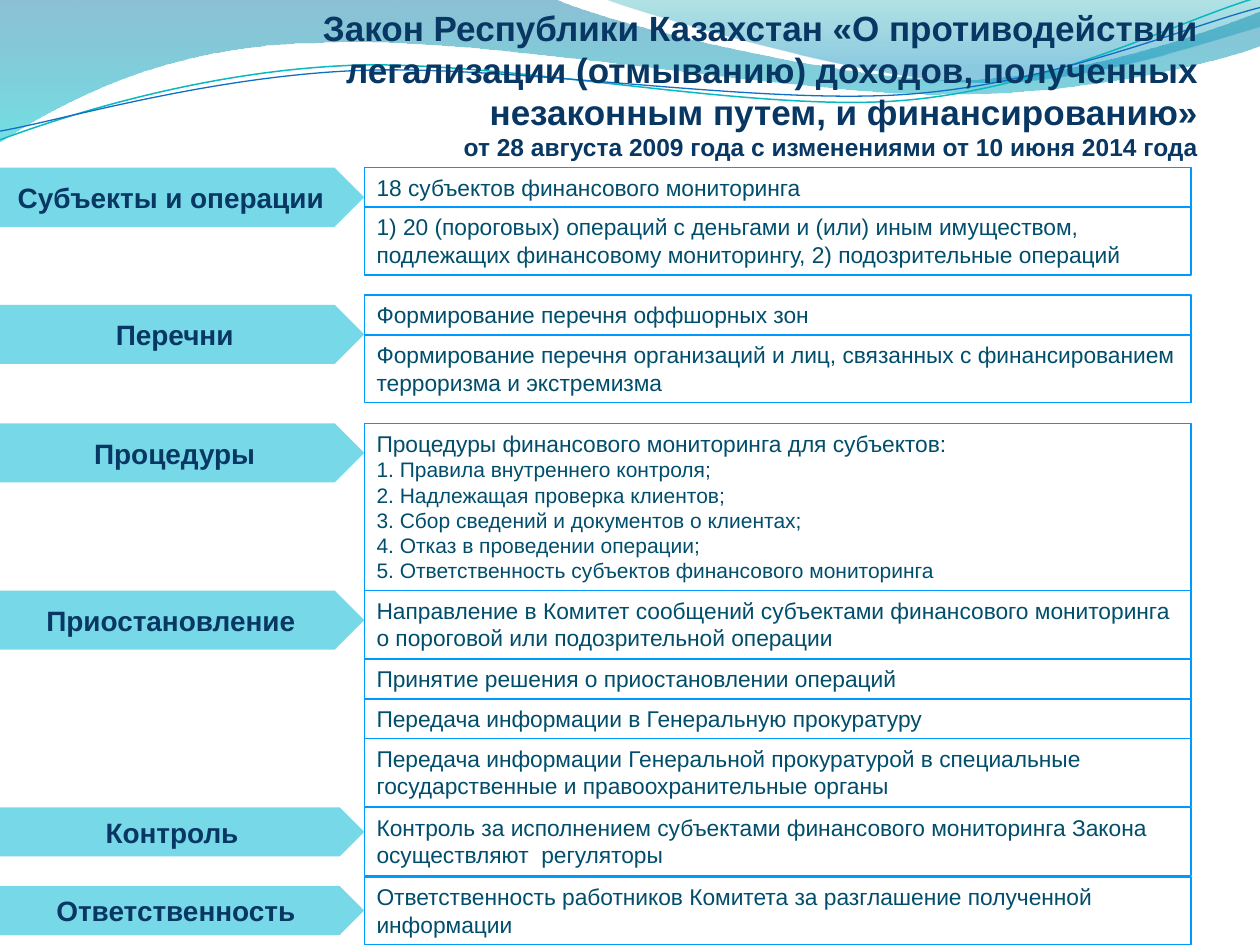
"""Build a slide on the Kazakhstan law against money laundering."""
from math import cos, radians, sin

from lxml import etree
from pptx import Presentation
from pptx.dml.color import RGBColor
from pptx.enum.shapes import MSO_SHAPE
from pptx.enum.text import MSO_ANCHOR, MSO_AUTO_SIZE, PP_ALIGN
from pptx.oxml.ns import qn
from pptx.util import Pt

PENTAGON, RECTANGLE = MSO_SHAPE.PENTAGON, MSO_SHAPE.RECTANGLE
TOP, MIDDLE = MSO_ANCHOR.TOP, MSO_ANCHOR.MIDDLE
NO_FIT, GROW = MSO_AUTO_SIZE.NONE, MSO_AUTO_SIZE.SHAPE_TO_FIT_TEXT
LEFT, CENTER, RIGHT = PP_ALIGN.LEFT, PP_ALIGN.CENTER, PP_ALIGN.RIGHT

NAVY = RGBColor(0x08, 0x37, 0x63)
TEAL_TEXT = RGBColor(0x00, 0x4E, 0x6C)
AQUA = RGBColor(0x77, 0xD9, 0xE8)
FRAME_BLUE = RGBColor(0x00, 0x99, 0xFF)
WAVE_BLUE = RGBColor(0x00, 0x74, 0xA1)
WAVE_CYAN = RGBColor(0x00, 0xC6, 0xCF)
WAVE_GREEN = RGBColor(0x00, 0xA1, 0xA9)
WAVE_SKY = RGBColor(0x00, 0x8B, 0xBF)
THREAD_CYAN = RGBColor(0x0A, 0xB8, 0xBF)
THREAD_BLUE = RGBColor(0x0F, 0x6F, 0xC6)

TITLE = [
    ("Закон Республики Казахстан «О противодействии легализации (отмыванию) доходов, "
     "полученных незаконным путем, и финансированию»", 20),
    ("от 28 августа 2009 года с изменениями от 10 июня 2014 года", 14),
]
FIRST_LABEL = ("Субъекты и операции ", 95.8, 33.8)
OTHER_LABELS = [
    ("Контроль ", 461.3, 28.1),
    ("Перечни", 174.2, 33.8),
    ("Процедуры", 241.9, 33.8),
    ("Приостановление ", 337.5, 33.8),
    ("Ответственность", 506.2, 28.1),
]
ROWS = [
    (118.3, 2, ["1) 20 (пороговых) операций с деньгами и (или) иным имуществом, "
                "подлежащих финансовому мониторингу, 2) подозрительные операций"]),
    (95.6, 1, ["18 субъектов финансового мониторинга"]),
    (241.9, 6, ["Процедуры финансового мониторинга для субъектов:",
                "1. Правила внутреннего контроля;\v2. Надлежащая проверка клиентов;",
                "3. Сбор сведений и документов о клиентах;\v4. Отказ в проведении операции;",
                "5. Ответственность субъектов финансового мониторинга"]),
    (168.6, 1, ["Формирование перечня оффшорных зон"]),
    (191.3, 2, ["Формирование перечня организаций и лиц, связанных с финансированием "
                "терроризма и экстремизма"]),
    (399.3, 1, ["Передача информации в Генеральную прокуратуру"]),
    (376.6, 1, ["Принятие решения о приостановлении операций"]),
    (337.5, 2, ["Направление в Комитет сообщений субъектами финансового мониторинга "
                "о пороговой или подозрительной операции"]),
    (461.3, 2, ["Контроль за исполнением субъектами финансового мониторинга Закона "
                "осуществляют  регуляторы"]),
    (501.1, 2, ["Ответственность работников Комитета за разглашение полученной информации"]),
    (422.1, 2, ["Передача информации Генеральной прокуратурой в специальные "
                "государственные и правоохранительные органы"]),
]
ROW_HEIGHTS = {1: 22.9, 2: 38.8, 6: 95.6}
LABEL_WIDTH, ROW_WIDTH = 208.1, 472.5

WAVES = [
    ((0, -0.7), [
        (316.8, -0.7), (342.7, 12.2, 478.1, 45.4, 545.8, 45.4),
        (614.2, 45.4, 689.8, 18.7, 720, 6.5), (720.7, 25.9),
        (707.8, 31.7, 626.4, 54.7, 537.1, 54), (447.8, 54, 275, 20.2, 185, 24.5),
        (92.9, 25.2, 33.1, 59.8, -0.7, 81.4)],
     [(0, WAVE_BLUE, 45), (1, WAVE_CYAN, 55)]),
    ((344.9, -0.7), [
        (366.5, 7.9, 491, 44.6, 553.7, 46.8),
        (616.3, 49.7, 691.9, 23, 720, 15.1), (720, 0)],
     [(0, WAVE_GREEN, 30), (0.8, WAVE_SKY, 45)]),
]
THREADS = [
    ((0, 79.9), [
        (34.6, 67, 113.8, 41, 199.4, 37.4), (284.4, 33.8, 427, 64.1, 513.4, 57.6),
        (599.8, 51.1, 675.4, 10.8, 718.6, -1.4)], THREAD_CYAN, 0.85),
    ((0, 74.9), [
        (33.8, 69.1, 118.1, 43.9, 203.8, 40.3), (290.2, 36.7, 429.8, 59.8, 516.2, 54),
        (601.9, 48.2, 677.5, 15.1, 720, 4.3)], THREAD_BLUE, 0.75),
]
THREAD_TURN, THREAD_CENTER = 357.3, (359.3, 41.4)


def turn_back(values):
    """Undo the thread rotation for a flat run of coordinates."""
    angle = radians(-THREAD_TURN)
    middle_x, middle_y = THREAD_CENTER
    turned = []
    for x, y in zip(values[::2], values[1::2]):
        x, y = x - middle_x, y - middle_y
        turned += [middle_x + x * cos(angle) - y * sin(angle),
                   middle_y + x * sin(angle) + y * cos(angle)]
    return tuple(turned)


def add_outline(page, start, segments, closed):
    """Draw a freeform whose six-number segments are cubic curves."""
    builder = page.shapes.build_freeform(Pt(start[0]), Pt(start[1]))
    builder.add_line_segments([(Pt(s[-2]), Pt(s[-1])) for s in segments], close=closed)
    shape = builder.convert_to_shape()
    shape.shadow.inherit = False
    lines = list(shape._element.spPr.iter(qn("a:lnTo")))
    for line, segment in zip(lines, segments):
        if len(segment) == 6:
            curve = etree.Element(qn("a:cubicBezTo"))
            for x, y in zip(segment[::2], segment[1::2]):
                point = etree.SubElement(curve, qn("a:pt"))
                point.set("x", str(Pt(x) - shape.left))
                point.set("y", str(Pt(y) - shape.top))
            line.getparent().replace(line, curve)
    return shape


def add_wave(page, start, segments, stops):
    """Draw a wave with a see-through vertical gradient."""
    wave = add_outline(page, start, segments, True)
    wave.line.fill.background()
    wave.fill.gradient()
    wave.fill.gradient_angle = 270
    for stop, (position, color, _) in zip(wave.fill.gradient_stops, stops):
        stop.position = position
        stop.color.rgb = color
    for element, (_, _, opacity) in zip(wave._element.spPr.iter(qn("a:srgbClr")), stops):
        etree.SubElement(element, qn("a:alpha")).set("val", str(opacity * 1000))


def add_thread(page, start, segments, color, width):
    """Draw a thin curved line."""
    thread = add_outline(page, turn_back(start), [turn_back(s) for s in segments], False)
    thread.rotation = THREAD_TURN
    thread.fill.background()
    thread.line.color.rgb = color
    thread.line.width = Pt(width)


def write(shape, paragraphs, color=TEAL_TEXT, align=LEFT, anchor=TOP, bold=False, fit=GROW):
    """Fill a shape with (text, size) paragraphs."""
    frame = shape.text_frame
    frame.word_wrap = True
    frame.auto_size = fit
    frame.vertical_anchor = anchor
    for index, (text, size) in enumerate(paragraphs):
        para = frame.add_paragraph() if index else frame.paragraphs[0]
        para.text = text
        para.alignment = align
        for span in para.runs:
            font = span.font
            font.name, font.size, font.bold = "Arial", Pt(size), bold
            font.color.rgb = color


def add_box(page, kind, left, top, width, height):
    """Add a preset shape without a shadow."""
    box = page.shapes.add_shape(kind, Pt(left), Pt(top), Pt(width), Pt(height))
    box.shadow.inherit = False
    return box


def add_row(page, top, lines, texts):
    """Add one framed row of text."""
    row = add_box(page, RECTANGLE, LABEL_WIDTH, top, ROW_WIDTH, ROW_HEIGHTS[lines])
    row.fill.background()
    row.line.color.rgb = FRAME_BLUE
    row.line.width = Pt(0.75)
    write(row, [(text, 12 if index else 13) for index, text in enumerate(texts)])


def add_label(page, text, top, height):
    """Add one arrow label at the left edge."""
    arrow = add_box(page, PENTAGON, 0, top, LABEL_WIDTH, height)
    arrow.fill.solid()
    arrow.fill.fore_color.rgb = AQUA
    arrow.line.fill.background()
    write(arrow, [(text, 16)], color=NAVY, align=CENTER, anchor=MIDDLE, bold=True, fit=NO_FIT)


def main():
    """Build and save the deck."""
    deck = Presentation()
    deck.slide_width, deck.slide_height = Pt(720), Pt(540)
    page = deck.slides.add_slide(deck.slide_layouts[5])
    for wave in WAVES:
        add_wave(page, *wave)
    for thread in THREADS:
        add_thread(page, *thread)
    title = page.shapes.title
    page.shapes._spTree.append(title._element)
    title.left, title.top, title.width, title.height = Pt(67.7), Pt(0), Pt(624.2), Pt(97.2)
    write(title, TITLE, color=NAVY, align=RIGHT, bold=True)
    add_label(page, *FIRST_LABEL)
    for row in ROWS:
        add_row(page, *row)
    for label in OTHER_LABELS:
        add_label(page, *label)
    deck.save("out.pptx")


if __name__ == "__main__":
    main()
